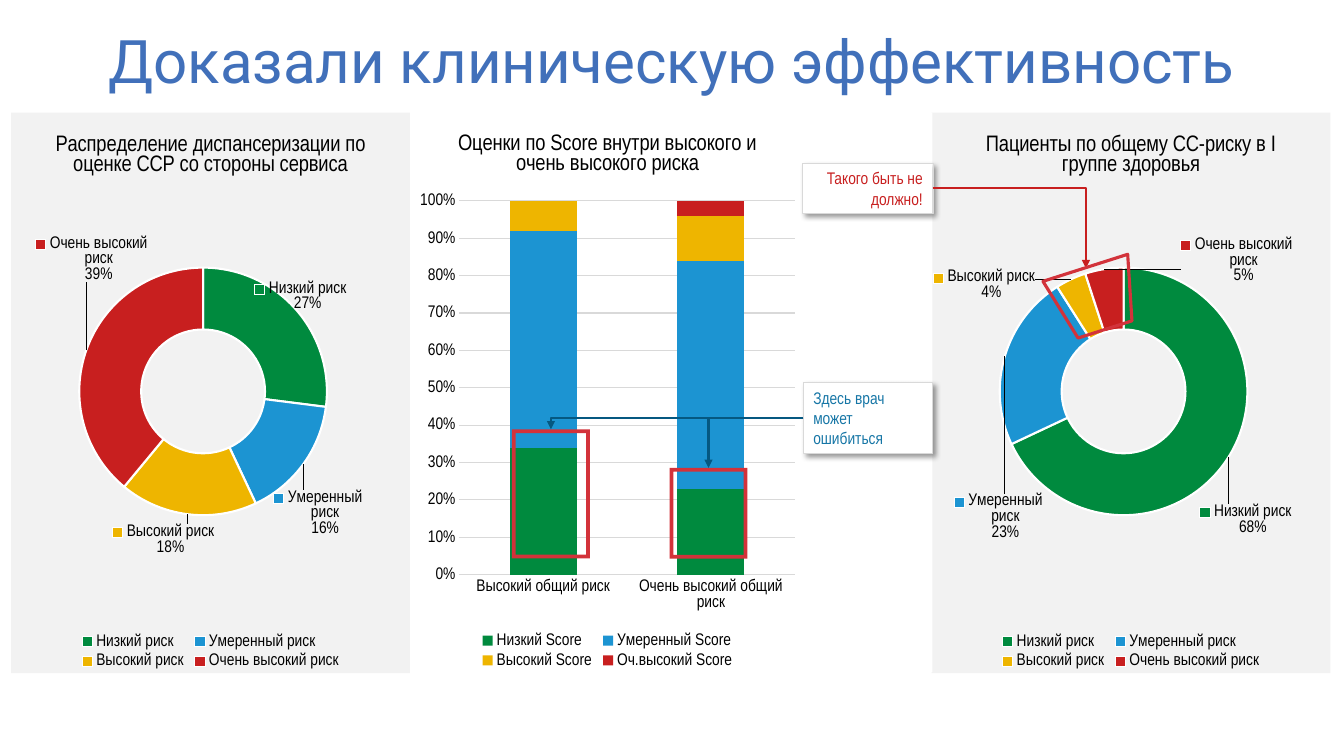
import copy
from lxml import etree
from pptx import Presentation
from pptx import util as u
from pptx.chart.data import CategoryChartData
from pptx.dml.color import RGBColor
from pptx.enum import chart as ch, shapes, text
from pptx.oxml import parse_xml
from pptx.oxml.ns import nsdecls, qn

# Content, lengths in cm
FONT = "Arial Narrow"
COLORS = ["008A3E", "1C94D2", "EEB500", "C81F1F"]
RED, BLUE, GRID = "C81F1F", "055881", "D9D9D9"
TITLE = "Доказали клиническую эффективность"
RISKS = ["Низкий риск", "Умеренный риск", "Высокий риск", "Очень высокий риск"]
# Label offsets are shares of the chart's width and height
DONUTS = [
    dict(title="Распределение диспансеризации по оценке ССР со стороны сервиса",
         box=(0.28, 2.84, 10.05, 14.12), values=[27, 16, 18, 39],
         offsets=[(0.07, -0.06), (0.1, 0.12), (-0.07, 0.1), (-0.06, -0.18)]),
    dict(title="Пациенты по общему СС-риску в I группе здоровья",
         box=(23.47, 2.84, 10.05, 14.12), values=[68, 23, 4, 5],
         offsets=[(0.11, 0.14), (-0.09, 0.27), (-0.25, -0.04), (0.32, -0.07)]),
]
STACK_TITLE = "Оценки по Score внутри высокого и очень высокого риска"
STACK_BOX = (10.39, 2.82, 9.83, 14.12)
STACK_CATEGORIES = ["Высокий общий риск", "Очень высокий общий риск"]
STACK = [("Низкий Score", (34, 23)), ("Умеренный Score", (58, 61)),
         ("Высокий Score", (8, 12)), ("Оч.высокий Score", (0, 4))]
FRAMES = [(12.9, 10.82, 1.96, 3.25), (16.87, 11.79, 1.96, 2.29)]
GAP_PANEL = (20.24, 2.84, 3.25, 14.1)
DOCTOR_NOTE = (20.24, 9.63, 3.25, 1.8)
WARNING_NOTE = (20.22, 4.11, 3.28, 1.27)
TRAPEZOID = (26.47, 6.71, 2.24, 1.63)
WARNING_TARGET = (27.36, 6.76)

presentation = Presentation()
presentation.slide_width, presentation.slide_height = u.Cm(33.86), u.Cm(19.05)
slide = presentation.slides.add_slide(presentation.slide_layouts[5])


def cm(lengths):
    return [u.Cm(length) for length in lengths]


def rgb(color):
    return RGBColor.from_string(color)


def write(frame, content, size, color="000000", font=FONT, align=None, spacing=None):
    paragraph = frame.paragraphs[0]
    paragraph.alignment, paragraph.line_spacing = align, spacing
    run = paragraph.add_run()
    run.text = content
    set_font(run.font, size, color, font)


def set_font(font, size, color="000000", name=FONT):
    font.size, font.name, font.bold = u.Pt(size), name, False
    font.color.rgb = rgb(color)


def add_shape(kind, box, fill=None, line=None, width=0.25):
    shape = slide.shapes.add_shape(kind, *cm(box))
    shape.shadow.inherit = False
    for part, color in ((shape.fill, fill), (shape.line.fill, line)):
        if color:
            part.solid()
            part.fore_color.rgb = rgb(color)
        else:
            part.background()
    if line:
        shape.line.width = u.Pt(width)
    return shape


def add_chart(kind, box, title, categories, series, fill):
    data = CategoryChartData()
    data.categories = categories
    for name, values in series:
        data.add_series(name, values)
    chart = slide.shapes.add_chart(kind, *cm(box), data).chart
    set_font(chart.font, 10)
    chart.has_title = True
    write(chart.chart_title.text_frame, title, 16)
    chart.chart_title.include_in_layout = False
    chart.has_legend = True
    chart.legend.position = ch.XL_LEGEND_POSITION.BOTTOM
    chart.legend.include_in_layout = False
    set_font(chart.legend.font, 12)
    chart._chartSpace.find(qn("c:chart")).addnext(parse_xml(
        f'<c:spPr {nsdecls("c", "a")}><a:solidFill><a:srgbClr val="{fill}"/></a:solidFill>'
        '<a:ln><a:noFill/></a:ln></c:spPr>'))
    return chart


def manual_layout(**settings):
    items = "".join(f'<c:{key} val="{value}"/>' for key, value in settings.items())
    return f'<c:layout {nsdecls("c")}><c:manualLayout>{items}</c:manualLayout></c:layout>'


def add_donut(title, box, values, offsets):
    chart = add_chart(ch.XL_CHART_TYPE.DOUGHNUT, box, title, RISKS,
                      [("Series 1", values)], "F2F2F2")
    area = chart._chartSpace.find(".//" + qn("c:plotArea"))
    for layout in area.findall(qn("c:layout")):
        area.remove(layout)
    area.insert(0, parse_xml(manual_layout(
        layoutTarget="inner", xMode="edge", yMode="edge", x=0.171, y=0.276, w=0.621, h=0.443)))
    area.find(".//" + qn("c:holeSize")).set("val", "59")
    series = chart.plots[0].series[0]
    for index, color in enumerate(COLORS):
        style = series.points[index].format
        style.fill.solid()
        style.fill.fore_color.rgb = rgb(color)
        style.line.color.rgb = rgb("FFFFFF")
        style.line.width = u.Pt(1.5)

    # Category and percent labels, each moved from its slice
    labels = series.data_labels
    labels.show_value = False
    labels.show_category_name = labels.show_percentage = labels.show_legend_key = True
    labels.number_format, labels.number_format_is_linked = "0%", False
    set_font(labels.font, 12)
    group = labels._element
    group.find(qn("c:txPr")).find(qn("a:bodyPr")).set("wrap", "square")
    separator = etree.Element(qn("c:separator"))
    separator.text = "\n"
    group.find(qn("c:showBubbleSize")).addnext(separator)
    shared = [part for part in group if part.tag != qn("c:showLeaderLines")]
    for index, (x, y) in enumerate(offsets):
        label = parse_xml(f'<c:dLbl {nsdecls("c")}><c:idx val="{index}"/>'
                          f'{manual_layout(x=x, y=y)}</c:dLbl>')
        label.extend(copy.deepcopy(part) for part in shared)
        group.insert(index, label)


def add_stack():
    chart = add_chart(ch.XL_CHART_TYPE.COLUMN_STACKED_100, STACK_BOX, STACK_TITLE,
                      STACK_CATEGORIES, STACK, "FFFFFF")
    plot = chart.plots[0]
    plot.gap_width, plot.overlap, plot.vary_by_categories = 150, 100, False
    for series, color in zip(plot.series, COLORS):
        series.format.fill.solid()
        series.format.fill.fore_color.rgb = rgb(color)
    for axis in (chart.category_axis, chart.value_axis):
        axis.major_tick_mark = axis.minor_tick_mark = ch.XL_TICK_MARK.NONE
        set_font(axis.tick_labels.font, 12)
    values = chart.value_axis
    values.tick_labels.number_format = "0%"
    values.tick_labels.number_format_is_linked = False
    values.format.line.fill.background()
    for line in (chart.category_axis.format.line, values.major_gridlines.format.line):
        line.color.rgb = rgb(GRID)
        line.width = u.Pt(0.75)


def add_note(box, content, color, align):
    note = add_shape(shapes.MSO_SHAPE.RECTANGLE, box, "FFFFFF", GRID)
    effects = note._element.spPr.find(qn("a:effectLst"))
    effects.append(parse_xml(
        f'<a:outerShdw {nsdecls("a")} blurRad="50800" dist="38100" dir="2700000" algn="tl">'
        '<a:srgbClr val="000000"><a:alpha val="40000"/></a:srgbClr></a:outerShdw>'))
    note.text_frame.word_wrap = True
    note.text_frame.auto_size = text.MSO_AUTO_SIZE.SHAPE_TO_FIT_TEXT
    write(note.text_frame, content, 12, color, align=align)


def add_arrow(start, end, color):
    arrow = slide.shapes.add_connector(shapes.MSO_CONNECTOR.ELBOW, *cm(start + end))
    arrow.line.color.rgb = rgb(color)
    arrow.line.width = u.Pt(1.5)
    properties = arrow._element.spPr
    properties.find(qn("a:prstGeom")).set("prst", "bentConnector2")
    if end[0] < start[0]:  # leftward bend: half turn plus vertical flip
        transform = properties.find(qn("a:xfrm"))
        transform.attrib.pop("flipH", None)
        transform.set("rot", "10800000")
        transform.set("flipV", "1")
    etree.SubElement(properties.find(qn("a:ln")), qn("a:tailEnd"), type="triangle")
    etree.SubElement(properties, qn("a:effectLst"))


# Title
title = slide.shapes.title
title.left, title.top, title.width, title.height = cm((2.31, 0.66, 29.21, 1.93))
title.text_frame.word_wrap = True
title.text_frame.auto_size = text.MSO_AUTO_SIZE.NONE
title.text_frame.vertical_anchor = text.MSO_ANCHOR.MIDDLE
write(title.text_frame, TITLE, 42.9, "4170BA", "Roboto", text.PP_ALIGN.CENTER, 0.9)

# Charts
for donut in DONUTS:
    add_donut(**donut)
add_stack()

# Highlights and notes
for box in FRAMES:
    add_shape(shapes.MSO_SHAPE.FRAME, box, "D3323A").adjustments[0] = 0.048
add_shape(shapes.MSO_SHAPE.RECTANGLE, GAP_PANEL, "FFFFFF")
add_note(DOCTOR_NOTE, "Здесь врач может ошибиться", "1676A6", text.PP_ALIGN.LEFT)
add_note(WARNING_NOTE, "Такого быть не должно!", RED, text.PP_ALIGN.RIGHT)

# Arrows from the notes to the highlights
left, top, width, height = DOCTOR_NOTE
for x, y, frame_width, _ in FRAMES:
    add_arrow((left, top + height / 2), (x + frame_width / 2, y), BLUE)
left, top, width, height = WARNING_NOTE
add_arrow((left + width, top + height / 2), WARNING_TARGET, RED)
add_shape(shapes.MSO_SHAPE.TRAPEZOID, TRAPEZOID, line="D2333B", width=2.25).rotation = 162.3

presentation.save("out.pptx")
